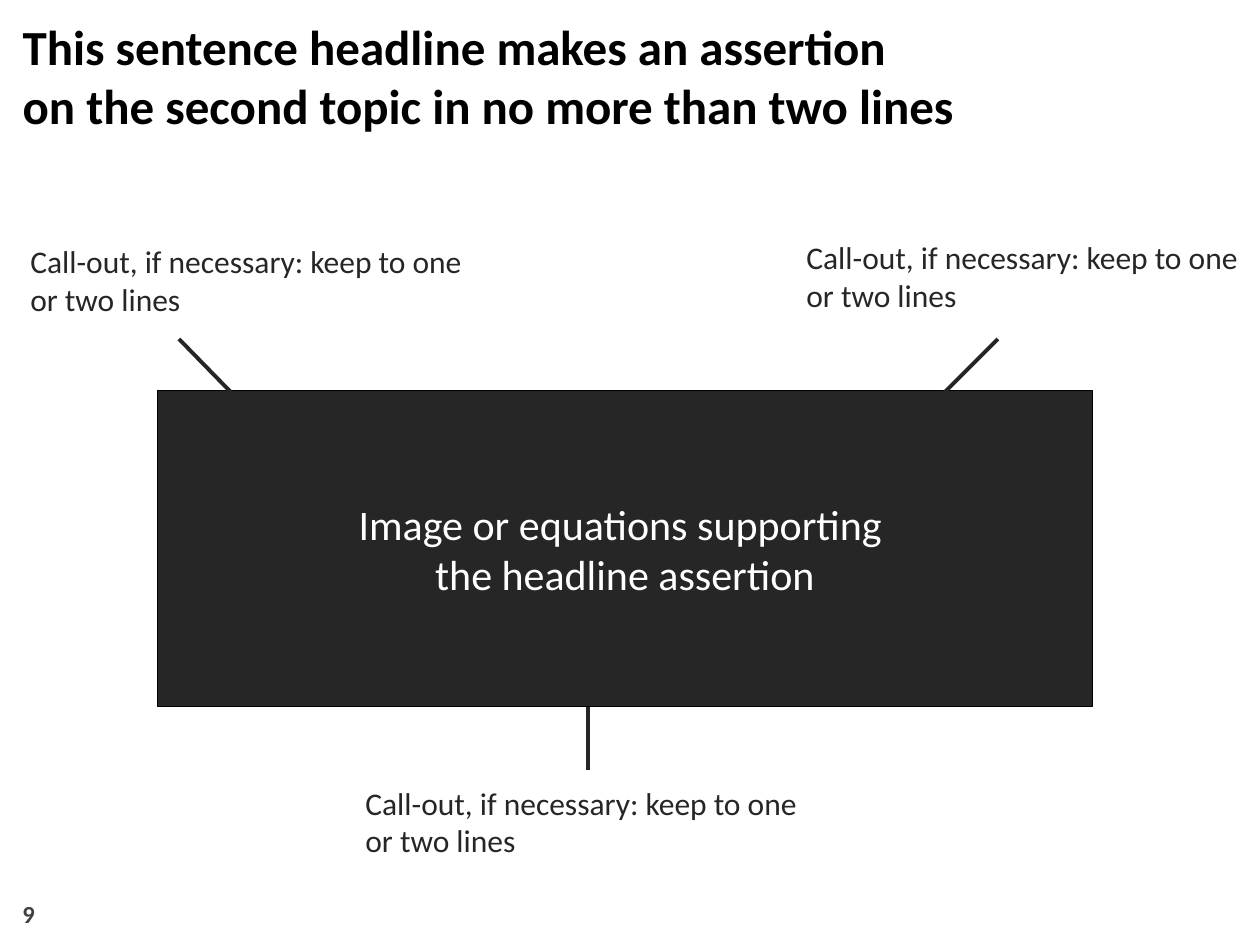
import pptx
import pptx.util
import pptx.dml.color
import pptx.enum.shapes
import pptx.enum.text
import pptx.oxml.ns
import lxml.etree

Inches = pptx.util.Inches
Pt = pptx.util.Pt
PP_ALIGN = pptx.enum.text.PP_ALIGN
MSO_ANCHOR = pptx.enum.text.MSO_ANCHOR

COLORS = {"black": "000000", "dark": "262626", "gray": "404040", "white": "FFFFFF"}
CALLOUT = "Call-out, if necessary: keep to one or two lines"


def color(name):
    return pptx.dml.color.RGBColor.from_string(COLORS[name])


def set_text(sp, text, size, ink, bold=False, align=PP_ALIGN.LEFT, anchor=MSO_ANCHOR.TOP):
    tf = sp.text_frame
    tf.word_wrap = True
    tf.auto_size = pptx.enum.text.MSO_AUTO_SIZE.NONE
    tf.vertical_anchor = anchor
    p = tf.paragraphs[0]
    p.text = text
    p.alignment = align
    for r in p.runs:
        r.font.name = "Calibri"
        r.font.size = Pt(size)
        r.font.bold = bold
        r.font.color.rgb = color(ink)


def add_title(s, text):
    sp = s.shapes.title
    sp.left, sp.top = Inches(0.08), Inches(0.08)
    sp.width, sp.height = Inches(9.75), Inches(1.03)
    set_text(sp, text, 28, "black", bold=True)


def add_callout(s, x, y):
    sp = s.shapes.add_textbox(Inches(x), Inches(y), Inches(3.58), Inches(0.66))
    tf = sp.text_frame
    tf.margin_left = tf.margin_right = Inches(0.07)
    tf.margin_top = tf.margin_bottom = Inches(0.03)
    set_text(sp, CALLOUT, 18, "dark")


def add_leader(s, x1, y1, x2, y2):
    line = s.shapes.add_connector(
        pptx.enum.shapes.MSO_CONNECTOR.STRAIGHT,
        Inches(x1), Inches(y1), Inches(x2), Inches(y2))
    line.line.color.rgb = color("dark")
    line.line.width = Pt(2.25)
    lxml.etree.SubElement(line._element.spPr, pptx.oxml.ns.qn("a:effectLst"))


def add_panel(s, text):
    sp = s.shapes.add_shape(
        pptx.enum.shapes.MSO_SHAPE.RECTANGLE,
        Inches(1.25), Inches(3.1), Inches(7.42), Inches(2.51))
    sp.shadow.inherit = False
    sp.fill.solid()
    sp.fill.fore_color.rgb = color("dark")
    sp.line.color.rgb = color("black")
    sp.line.width = Pt(0.75)
    set_text(sp, text, 24, "white", align=PP_ALIGN.CENTER, anchor=MSO_ANCHOR.MIDDLE)


def add_page_number(s, text):
    sp = s.shapes.add_textbox(Inches(0.08), Inches(7.02), Inches(2.33), Inches(0.4))
    set_text(sp, text, 14, "gray", bold=True, anchor=MSO_ANCHOR.BOTTOM)


def main():
    prs = pptx.Presentation()
    prs.slide_width, prs.slide_height = Inches(10), Inches(7.5)
    s = prs.slides.add_slide(prs.slide_layouts[5])
    add_title(s, "This sentence headline makes an assertion \v"
                 "on the second topic in no more than two lines")
    add_page_number(s, "9")
    add_leader(s, 4.67, 5.44, 4.67, 6.11)
    add_panel(s, "Image or equations supporting \vthe headline assertion")
    add_leader(s, 1.42, 2.69, 1.83, 3.11)
    add_leader(s, 7.92, 2.69, 7.5, 3.11)
    for x, y in ((0.17, 1.89), (6.33, 1.86), (2.83, 6.19)):
        add_callout(s, x, y)
    prs.save("out.pptx")


if __name__ == "__main__":
    main()
